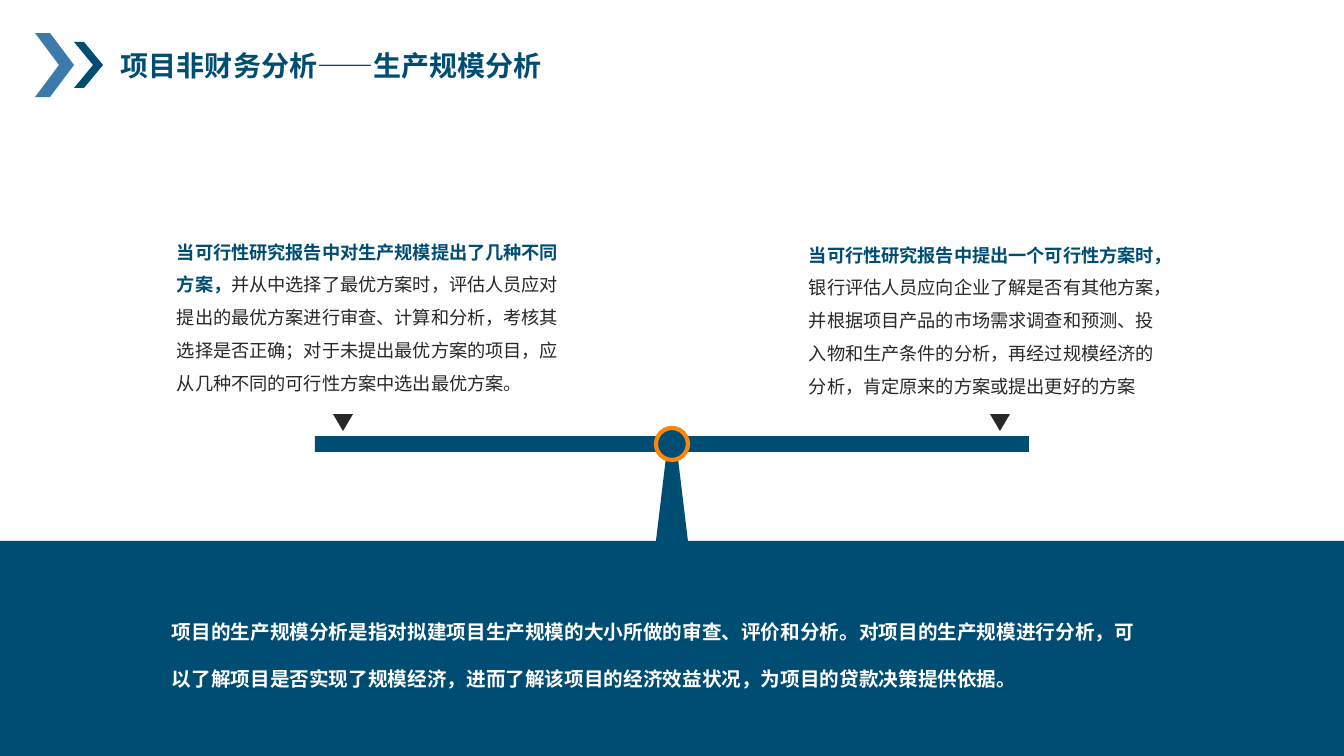
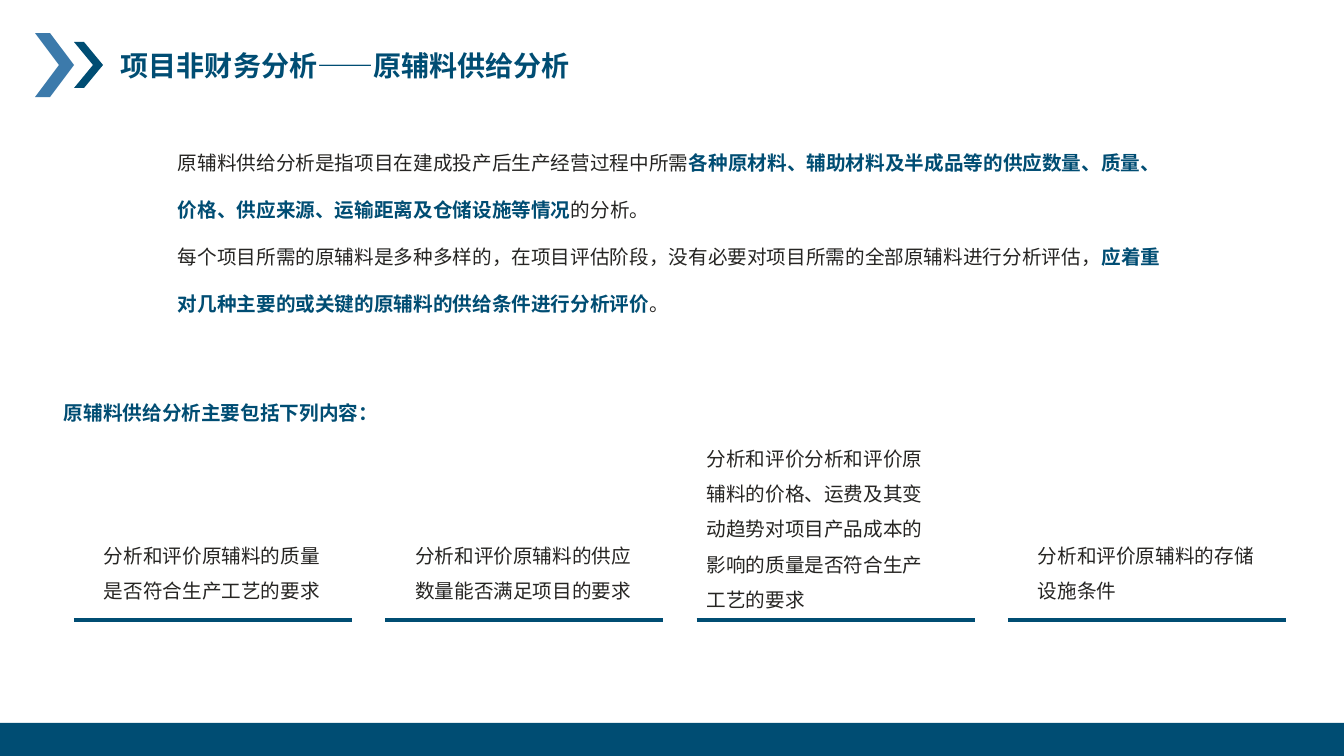
from lxml import etree
from pptx import Presentation
from pptx import util as u
from pptx.dml.color import RGBColor
from pptx.enum import shapes, text
from pptx.oxml import ns

PX = 914400 / 100.8
WIDE, HIGH = 1344, 756
FOOT = 33
FONT = "Noto Sans CJK SC"
NAVY, BLUE, ORANGE, WHITE = "004D73", "3C7AAB", "FF8607", "FFFFFF"
DARK, INK = "282828", "262523"
KIND = shapes.MSO_SHAPE
TITLE = {"size": u.Pt(20), "bold": True}
LEAD = {"size": u.Pt(14), "bold": True}
BODY = {"size": u.Pt(14), "bold": False}
NOTE = {"size": u.Pt(13), "bold": False}
NOTE_LEAD = {"size": u.Pt(13), "bold": True}


def px(n):
    """Turn px into EMU."""
    return u.Emu(round(n * PX))


def tint(code):
    """Turn a hex string into a colour."""
    return RGBColor.from_string(code)


def paint(shape, fill, line=None, wide=0):
    """Give a shape a flat fill and an optional outline."""
    shape.shadow.inherit = False
    shape.fill.solid()
    shape.fill.fore_color.rgb = tint(fill)
    if line:
        shape.line.color.rgb = tint(line)
        shape.line.width = u.Pt(wide)
    else:
        shape.line.fill.background()
    return shape


def block(slide, kind, box, fill, line=None, wide=0):
    """Add a preset shape."""
    shape = slide.shapes.add_shape(kind, *map(px, box))
    return paint(shape, fill, line, wide)


def outline(slide, points, fill):
    """Add a closed polygon."""
    pen = slide.shapes.build_freeform(*points[0], scale=PX)
    pen.add_line_segments(points[1:], close=True)
    return paint(pen.convert_to_shape(), fill)


def rule(slide, x, y, w):
    """Add a level line."""
    line = slide.shapes.add_connector(
        shapes.MSO_CONNECTOR.STRAIGHT, px(x), px(y), px(x + w), px(y))
    line.line.color.rgb = tint(NAVY)
    line.line.width = u.Pt(2.25)
    etree.SubElement(line._element.spPr, ns.qn("a:effectLst"))


def write(slide, box, paras, gap=1, wrap=True):
    """Add a text box from paragraphs of (words, colour, style) runs."""
    frame = slide.shapes.add_textbox(*map(px, box)).text_frame
    frame.word_wrap = wrap
    frame.auto_size = text.MSO_AUTO_SIZE.SHAPE_TO_FIT_TEXT
    for i, runs in enumerate(paras):
        para = frame.add_paragraph() if i else frame.paragraphs[0]
        para.line_spacing = float(gap)
        for words, code, style in runs:
            run = para.add_run()
            run.text = words
            run.font.name = FONT
            run.font.color.rgb = tint(code)
            for key, value in style.items():
                setattr(run.font, key, value)
            east = etree.SubElement(run.font._element, ns.qn("a:ea"))
            east.set("typeface", FONT)


def chevron(slide, box, thick, fill):
    """Add one arrow mark."""
    x, y, w, h = box
    mid, low = y + h / 2, y + h
    outline(slide, [(x, y), (x + thick, y), (x + w, mid), (x + thick, low),
                    (x, low), (x + w - thick, mid)], fill)


def page(deck, title):
    """Add a slide with its title, marks and footer band."""
    slide = deck.slides.add_slide(deck.slide_layouts[6])
    write(slide, (111, 44, 639, 44), [[(title, NAVY, TITLE)]])
    chevron(slide, (35, 33, 39, 64), 15, BLUE)
    chevron(slide, (74, 42, 29, 46), 10, NAVY)
    block(slide, KIND.RECTANGLE, (0, HIGH - FOOT, WIDE, FOOT), NAVY)
    return slide


def scale(slide, box):
    """Add the balance: post, beam and pivot."""
    x, y, w, h = box
    mid, top, low = x + w / 2, y + 22, y + h
    outline(slide, [(mid - 6, top), (mid + 6, top),
                    (mid + 16, low), (mid - 16, low)], NAVY)
    block(slide, KIND.RECTANGLE, (x, y, w, 16), NAVY)
    block(slide, KIND.OVAL, (mid - 16, y - 8, 32, 32), NAVY, ORANGE, 3)


def weight(slide, box, tip, lead, rest):
    """Add a text on one arm with the pointer below it."""
    write(slide, box, [[(lead, NAVY, NOTE_LEAD), (rest, DARK, NOTE)]], 1.5)
    mark = block(slide, KIND.ISOSCELES_TRIANGLE, (tip, 414, 20, 17), DARK)
    mark.rotation = 180


def panel(slide, box, words):
    """Add the navy panel with its summary."""
    x, y, w, h = box
    block(slide, KIND.RECTANGLE, box, NAVY)
    write(slide, (x + 162, y + 50, 988, 98), [[(words, WHITE, LEAD)]], 2)


def columns(slide, box, pitch, items):
    """Add a row of texts, each above a line."""
    left, top, w, h = box
    for i, (dx, dy, words) in enumerate(items):
        x = left + i * pitch
        rule(slide, x, top + h, w)
        write(slide, (x + dx, top + dy, 250, h - dy - 10),
              [[(words, INK, BODY)]], 1.5)


def output(deck):
    """Build the production size slide."""
    slide = page(deck, "项目非财务分析——生产规模分析")
    scale(slide, (315, 436, 714, 105))
    weight(slide, (167, 225, 406, 171), 333,
           "当可行性研究报告中对生产规模提出了几种不同方案，",
           "并从中选择了最优方案时，评估人员应对提出的最优方案进行审查、计算和分析，"
           "考核其选择是否正确；对于未提出最优方案的项目，"
           "应从几种不同的可行性方案中选出最优方案。")
    weight(slide, (799, 228, 381, 171), 990,
           "当可行性研究报告中提出一个可行性方案时，",
           "银行评估人员应向企业了解是否有其他方案，"
           "并根据项目产品的市场需求调查和预测、投入物和生产条件的分析，"
           "再经过规模经济的分析，肯定原来的方案或提出更好的方案")
    panel(slide, (0, 541, WIDE, 182),
          "项目的生产规模分析是指对拟建项目生产规模的大小所做的审查、评价和分析。"
          "对项目的生产规模进行分析，可以了解项目是否实现了规模经济，"
          "进而了解该项目的经济效益状况，为项目的贷款决策提供依据。")


def supply(deck):
    """Build the material supply slide."""
    slide = page(deck, "项目非财务分析——原辅料供给分析")
    write(slide, (168, 122, 1006, 241), [
        [("原辅料供给分析是指项目在建成投产后生产经营过程中所需", INK, BODY),
         ("各种原材料、辅助材料及半成品等的供应数量、质量、价格、供应来源、"
          "运输距离及仓储设施等情况", NAVY, LEAD),
         ("的分析。", INK, BODY)],
        [("每个项目所需的原辅料是多种多样的，在项目评估阶段，"
          "没有必要对项目所需的全部原辅料进行分析评估，", INK, BODY),
         ("应着重对几种主要的或关键的原辅料的供给条件进行分析评价", NAVY, LEAD),
         ("。", INK, BODY)]], 2)
    write(slide, (54, 396, 337, 34),
          [[("原辅料供给分析主要包括下列内容：", NAVY, LEAD)]], wrap=False)
    columns(slide, (74, 430, 278, 190), 311.3, [
        (20, 97, "分析和评价原辅料的质量是否符合生产工艺的要求"),
        (20, 97, "分析和评价原辅料的供应数量能否满足项目的要求"),
        (0, 0, "分析和评价分析和评价原辅料的价格、运费及其变动趋势"
               "对项目产品成本的影响的质量是否符合生产工艺的要求"),
        (20, 97, "分析和评价原辅料的存储设施条件")])


def main():
    """Build and save the deck."""
    deck = Presentation()
    deck.slide_width, deck.slide_height = px(WIDE), px(HIGH)
    output(deck)
    supply(deck)
    deck.save("out.pptx")


if __name__ == "__main__":
    main()
